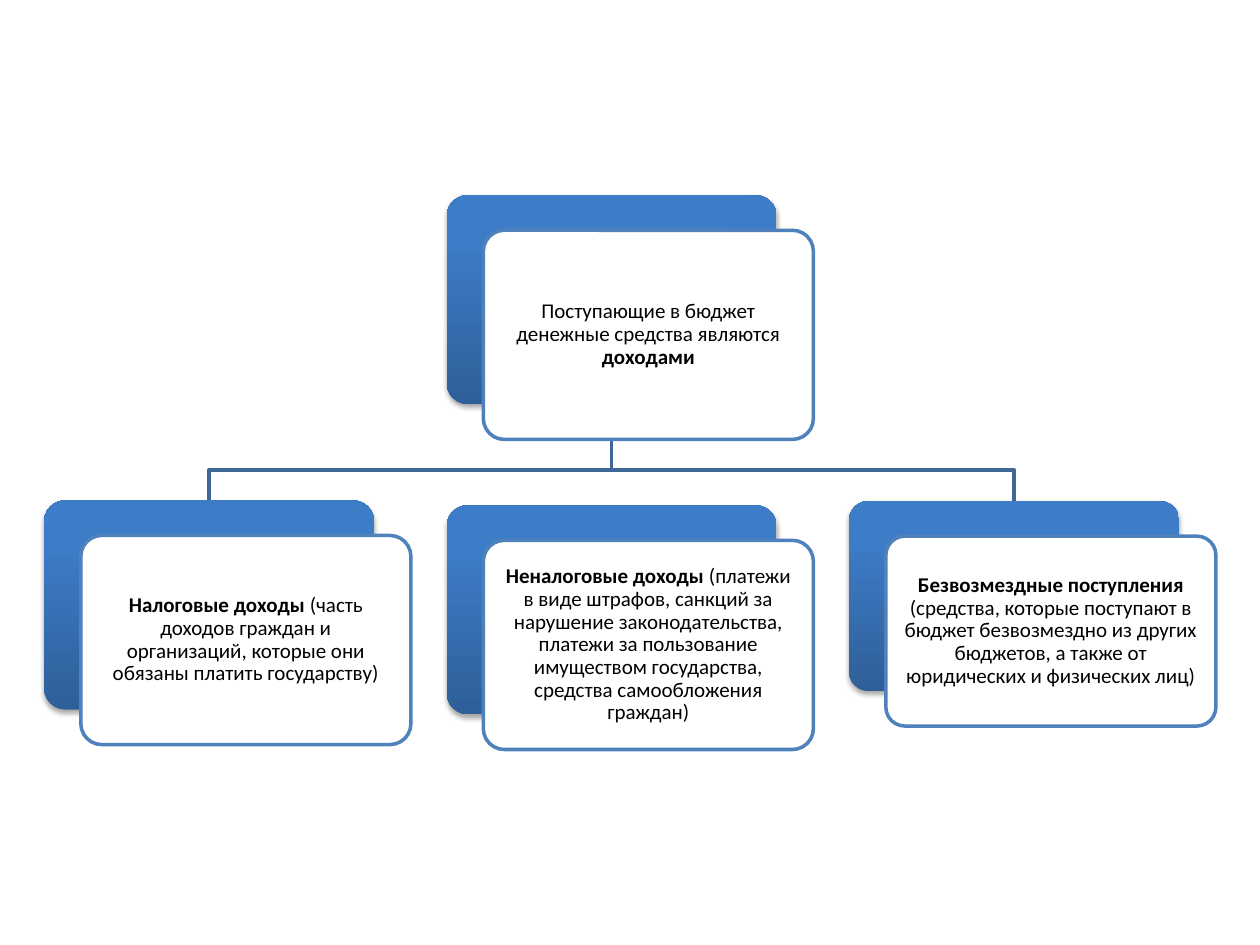
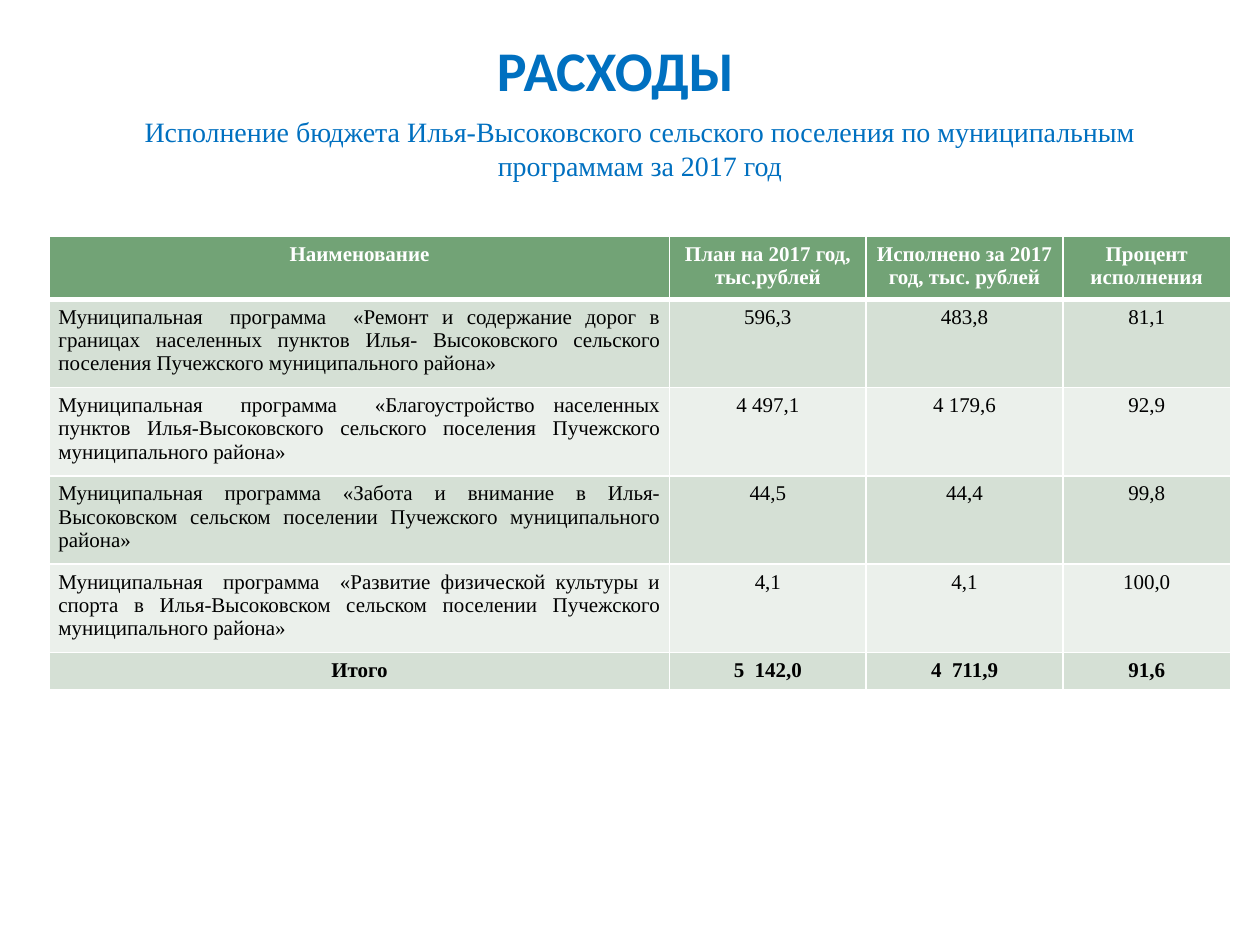
from lxml.etree import SubElement
from pptx import Presentation
from pptx.dml.color import RGBColor
from pptx.enum.shapes import MSO_SHAPE
from pptx.enum.text import MSO_ANCHOR, PP_ALIGN
from pptx.oxml import parse_xml
from pptx.oxml.ns import nsdecls, qn
from pptx.util import Pt

WHITE = RGBColor(0xFF, 0xFF, 0xFF)
BLACK = RGBColor(0, 0, 0)
DARK_BLUE = RGBColor(0x2F, 0x5F, 0x99)
MID_BLUE = RGBColor(0x3D, 0x7C, 0xC7)
CARD_LINE = RGBColor(0x4F, 0x81, 0xBD)
BRANCH_LINE = RGBColor(0x3F, 0x67, 0x97)
TITLE_BLUE = RGBColor(0x00, 0x70, 0xC0)
HEADER_GREEN = RGBColor(0x72, 0xA3, 0x76)
BANDS = RGBColor(0xD5, 0xE0, 0xD5), RGBColor(0xEB, 0xF0, 0xEB)
SANS, SERIF = "Calibri", "Times New Roman"

ROOT = [[("Поступающие в бюджет денежные средства являются ", False), ("доходами", True)]]
INCOME = [
    (286, 119.5, [[("Налоговые доходы ", True),
                   ("(часть доходов граждан и организаций, которые они обязаны платить государству)", False)]]),
    (288.8, 119.5, [[("Неналоговые доходы ", True),
                     ("(платежи в виде штрафов, санкций за нарушение законодательства, платежи за "
                      "пользование имуществом государства, средства самообложения граждан)", False)]]),
    (286.4, 108.5, [[("Безвозмездные поступления", True)],
                    [("(средства, которые поступают в бюджет безвозмездно из других бюджетов, "
                      "а также от юридических и физических лиц)", False)]]),
]
CARD_W, CARD_LEFT, CARD_PITCH = 188.6, 25.2, 230
SHIFT_X, SHIFT_Y = 21, 20
ROOT_TOP, ROOT_H, BRANCH_Y = 111.6, 119.5, 268.5

TITLE = "РАСХОДЫ"
SUBTITLE = "Исполнение бюджета Илья-Высоковского сельского поселения по муниципальным программам за 2017 год"
SPENDING = [
    ("Наименование", "План на 2017 год,\nтыс.рублей", "Исполнено за 2017 год, тыс. рублей", "Процент исполнения"),
    ("Муниципальная  программа  «Ремонт и содержание дорог в границах населенных пунктов "
     "Илья- Высоковского сельского поселения Пучежского муниципального района»", "596,3", "483,8", "81,1"),
    ("Муниципальная  программа  «Благоустройство населенных пунктов Илья-Высоковского "
     "сельского поселения Пучежского муниципального района»", "4 497,1", "4 179,6", "92,9"),
    ("Муниципальная программа «Забота и внимание в Илья- Высоковском сельском поселении "
     "Пучежского муниципального района»", "44,5", "44,4", "99,8"),
    ("Муниципальная  программа  «Развитие физической культуры и спорта в Илья-Высоковском "
     "сельском поселении Пучежского муниципального района»", "4,1", "4,1", "100,0"),
    ("Итого", "5  142,0", "4  711,9", "91,6"),
]
COL_WIDTHS = 354.2, 112.4, 112.4, 95.8
ROW_HEIGHTS = [33.4] + [47.2] * 4 + [20]


def style_run(r, font, size, color, bold=False):
    """Format one run."""
    r.font.name, r.font.size, r.font.bold = font, Pt(size), bold
    r.font.color.rgb = color


def add_card_shape(s, x, y, h):
    """Add a rounded rectangle without effects."""
    sp = s.shapes.add_shape(MSO_SHAPE.ROUNDED_RECTANGLE, Pt(x), Pt(y), Pt(CARD_W), Pt(h))
    sp.adjustments[0] = 0.1
    sp.shadow.inherit = False
    return sp


def add_card(s, x, y, h, paragraphs):
    """Add a gradient back plate and the white text card in front of it."""
    back = add_card_shape(s, x, y, h)
    back.line.fill.background()
    back.fill.gradient()
    back.fill.gradient_angle = 90
    for stop, color, position in zip(back.fill.gradient_stops, (DARK_BLUE, MID_BLUE), (0, 0.8)):
        stop.color.rgb, stop.position = color, position
    back._element.spPr.find(qn("a:effectLst")).append(parse_xml(
        f'<a:outerShdw {nsdecls("a")} blurRad="{Pt(3.1)}" dist="{Pt(1.8)}" dir="5400000" rotWithShape="0">'
        '<a:srgbClr val="000000"><a:alpha val="35000"/></a:srgbClr></a:outerShdw>'))

    front = add_card_shape(s, x + SHIFT_X, y + SHIFT_Y, h)
    front.fill.solid()
    front.fill.fore_color.rgb = WHITE
    front.line.color.rgb, front.line.width = CARD_LINE, Pt(2)
    tf = front.text_frame
    tf.word_wrap, tf.vertical_anchor = True, MSO_ANCHOR.MIDDLE
    tf.margin_left = tf.margin_right = tf.margin_top = tf.margin_bottom = Pt(7.2)
    for i, parts in enumerate(paragraphs):
        p = tf.add_paragraph() if i else tf.paragraphs[0]
        p.alignment, p.line_spacing = PP_ALIGN.CENTER, 0.9
        for text, bold in parts:
            r = p.add_run()
            r.text = text
            style_run(r, SANS, 12, BLACK, bold)


def add_branch(s, x0, y0, x1, y1):
    """Draw an elbow line from the root card to a lower card."""
    builder = s.shapes.build_freeform(Pt(x0), Pt(y0))
    builder.add_line_segments([(Pt(x), Pt(y)) for x, y in ((x0, BRANCH_Y), (x1, BRANCH_Y), (x1, y1))], close=False)
    sp = builder.convert_to_shape()
    sp.shadow.inherit = False
    sp.fill.background()
    sp.line.color.rgb, sp.line.width = BRANCH_LINE, Pt(2)


def build_income(prs):
    """Build the tree of budget income."""
    s = prs.slides.add_slide(prs.slide_layouts[6])
    lefts = [CARD_LEFT + i * CARD_PITCH for i in range(len(INCOME))]
    root_x = lefts[1]
    for i in (0, 2):
        add_branch(s, root_x + CARD_W / 2, ROOT_TOP + ROOT_H, lefts[i] + CARD_W / 2, INCOME[i][0])
    add_card(s, root_x, ROOT_TOP, ROOT_H, ROOT)
    for x, (y, h, paragraphs) in zip(lefts, INCOME):
        add_card(s, x, y, h, paragraphs)


def add_heading(sp, box, text, font, size, bold):
    """Place a heading and format its text."""
    sp.left, sp.top, sp.width, sp.height = map(Pt, box)
    tf = sp.text_frame
    tf.text = text
    tf.word_wrap, tf.vertical_anchor = True, MSO_ANCHOR.TOP
    p = tf.paragraphs[0]
    p.alignment = PP_ALIGN.CENTER
    style_run(p.runs[0], font, size, TITLE_BLUE, bold)


def set_borders(cell, top, bottom):
    """Give a cell white borders."""
    tc_pr = cell._tc.get_or_add_tcPr()
    for i, (side, width) in enumerate((("L", 0.96), ("R", 0.96), ("T", top), ("B", bottom))):
        ln = SubElement(tc_pr, qn(f"a:ln{side}"), w=str(Pt(width)))
        SubElement(SubElement(ln, qn("a:solidFill")), qn("a:srgbClr"), val=str(WHITE))
        tc_pr.insert(i, ln)


def build_spending(prs):
    """Build the table of spending by programme."""
    s = prs.slides.add_slide(prs.slide_layouts[5])
    add_heading(s.shapes.title, (73.4, 16.6, 556.6, 45.4), TITLE, SANS, 32, True)
    add_heading(s.shapes.add_textbox(0, 0, 0, 0), (33.8, 62, 663.8, 24), SUBTITLE, SERIF, 16, False)

    table = s.shapes.add_table(len(SPENDING), len(COL_WIDTHS), Pt(28.4), Pt(135),
                               Pt(sum(COL_WIDTHS)), Pt(sum(ROW_HEIGHTS))).table
    for column, width in zip(table.columns, COL_WIDTHS):
        column.width = Pt(width)
    last = len(SPENDING) - 1
    for i, values in enumerate(SPENDING):
        table.rows[i].height = Pt(ROW_HEIGHTS[i])
        for j, value in enumerate(values):
            cell = table.cell(i, j)
            cell.fill.solid()
            cell.fill.fore_color.rgb = BANDS[(i - 1) % 2] if i else HEADER_GREEN
            cell.margin_left = cell.margin_right = Pt(5)
            set_borders(cell, 3 if i == 1 else 0.96, 3 if i == 0 else 0.96)
            cell.text_frame.text = value
            for p in cell.text_frame.paragraphs:
                p.alignment = PP_ALIGN.JUSTIFY if j == 0 and 0 < i < last else PP_ALIGN.CENTER
                style_run(p.runs[0], SERIF, 12, BLACK if i else WHITE, i in (0, last))


def main():
    """Build and save the presentation."""
    prs = Presentation()
    prs.slide_width, prs.slide_height = Pt(720), Pt(540)
    build_income(prs)
    build_spending(prs)
    prs.save("out.pptx")


if __name__ == "__main__":
    main()
